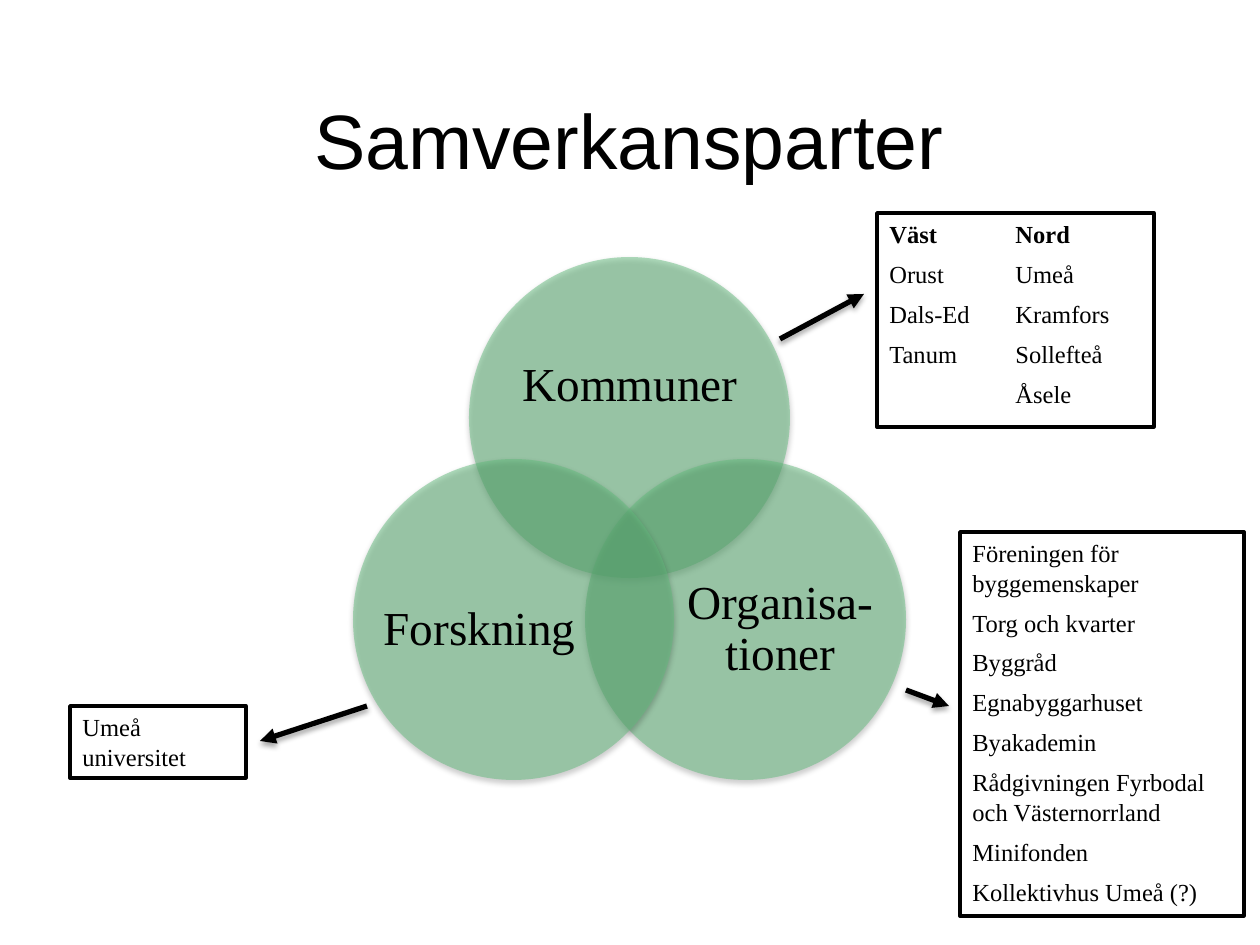
import pptx
import pptx.dml.color
import pptx.enum.shapes
import pptx.enum.text
import pptx.oxml
import pptx.oxml.ns
import pptx.util
from dataclasses import dataclass

SHAPE = pptx.enum.shapes.MSO_SHAPE
ALIGN = pptx.enum.text.PP_ALIGN
ANCHOR = pptx.enum.text.MSO_ANCHOR


@dataclass
class Theme:
    """Colours, fonts and sizes of the slide."""
    ink: str = "000000"
    paper: str = "FFFFFF"
    green: str = "62BA7C"
    sans: str = "Arial"
    serif: str = "Times New Roman"
    title: int = 44
    label: int = 27
    body: int = 14
    frame: int = 2
    arrow: int = 3
    gap: int = 6


THEME = Theme()
TOWNS = ["Väst", "Orust", "Dals-Ed", "Tanum",
         "Nord", "Umeå", "Kramfors", "Sollefteå", "Åsele"]
GROUPS = ["Föreningen för byggemenskaper", "Torg och kvarter", "Byggråd",
          "Egnabyggarhuset", "Byakademin",
          "Rådgivningen Fyrbodal och Västernorrland", "Minifonden",
          "Kollektivhus Umeå (?)"]


def px(num):
    """Turn pixels into EMU."""
    return pptx.util.Inches(num / 126)


def scale(box):
    """Turn a pixel box into EMU lengths."""
    return [px(num) for num in box]


def color(code):
    """Make a colour from its hex code."""
    return pptx.dml.color.RGBColor.from_string(code)


def make(tag, attrs=""):
    """Make an empty drawing element."""
    space = pptx.oxml.ns.nsdecls("a")
    return pptx.oxml.parse_xml(f"<a:{tag} {space} {attrs}/>")


def shade(item, alpha, dist):
    """Give a shape or line a soft shadow straight below."""
    list_ = make("effectLst")
    drop = make("outerShdw", f'blurRad="{pptx.util.Pt(3.1)}" '
                f'dist="{pptx.util.Pt(dist)}" dir="5400000" rotWithShape="0"')
    ink = make("srgbClr", f'val="{THEME.ink}"')
    ink.append(make("alpha", f'val="{alpha * 1000}"'))
    drop.append(ink)
    list_.append(drop)
    item.element.spPr.append(list_)


def style(para, size, face, bold=False):
    """Set the font of a paragraph."""
    font = para.font
    font.size = pptx.util.Pt(size)
    font.name = face
    font.bold = bold
    font.color.rgb = color(THEME.ink)


def title(slide, box, text):
    """Place the centred heading."""
    frame = slide.shapes.add_textbox(*scale(box)).text_frame
    frame.word_wrap = True
    frame.vertical_anchor = ANCHOR.MIDDLE
    para = frame.paragraphs[0]
    para.text = text
    para.alignment = ALIGN.CENTER
    style(para, THEME.title, THEME.sans)


def disc(slide, box):
    """Place one see-through circle."""
    item = slide.shapes.add_shape(SHAPE.OVAL, *scale(box))
    item.fill.solid()
    item.fill.fore_color.rgb = color(THEME.green)
    tint = item.element.spPr.find(".//" + pptx.oxml.ns.qn("a:srgbClr"))
    tint.append(make("alpha", 'val="50000"'))
    item.line.fill.background()
    shade(item, 38, 1.6)


def label(slide, box, text):
    """Place the centred name of a circle."""
    frame = slide.shapes.add_textbox(*scale(box)).text_frame
    frame.word_wrap = True
    frame.vertical_anchor = ANCHOR.MIDDLE
    frame.margin_left = frame.margin_right = 0
    frame.margin_top = frame.margin_bottom = 0
    para = frame.paragraphs[0]
    para.text = text
    para.alignment = ALIGN.CENTER
    para.line_spacing = 0.9
    style(para, THEME.label, THEME.serif)


def venn(slide, box):
    """Place three overlapping circles with their names."""
    left, top, wide, high = box
    size = 321
    far, low = wide - size, high - size
    parts = [("Kommuner", far / 2, 0, (159, 57, 236, 145)),
             ("Organisa-tioner", far, low, (331, 285, 193, 176)),
             ("Forskning", 0, low, (30, 285, 193, 176))]
    for text, x, y, (dx, dy, span, rise) in parts:
        disc(slide, (left + x, top + y, size, size))
        label(slide, (left + dx, top + dy, span, rise), text)


def panel(slide, box, lines, heads=(), cols=1):
    """Place a framed list, with bold heads that start columns."""
    item = slide.shapes.add_shape(SHAPE.RECTANGLE, *scale(box))
    item.shadow.inherit = False
    item.fill.solid()
    item.fill.fore_color.rgb = color(THEME.paper)
    item.line.color.rgb = color(THEME.ink)
    item.line.width = pptx.util.Pt(THEME.frame)
    frame = item.text_frame
    frame.word_wrap = True
    frame.vertical_anchor = ANCHOR.TOP
    if cols > 1:
        body = frame._txBody.find(pptx.oxml.ns.qn("a:bodyPr"))
        body.set("numCol", str(cols))
    for i, text in enumerate(lines):
        para = frame.add_paragraph() if i else frame.paragraphs[0]
        para.text = text
        para.alignment = ALIGN.LEFT
        ends = i + 1 < len(lines) and lines[i + 1] in heads
        room = 2 * THEME.gap + 16 if ends else THEME.gap
        para.space_after = pptx.util.Pt(room if len(lines) > 1 else 0)
        style(para, THEME.body, THEME.serif, text in heads)


def arrow(slide, start, end):
    """Draw an arrow from start to end."""
    kind = pptx.enum.shapes.MSO_CONNECTOR.STRAIGHT
    item = slide.shapes.add_connector(kind, *scale(start + end))
    item.line.color.rgb = color(THEME.ink)
    item.line.width = pptx.util.Pt(THEME.arrow)
    line = item.element.spPr.find(pptx.oxml.ns.qn("a:ln"))
    line.append(make("tailEnd", 'type="triangle"'))
    shade(item, 35, 1.8)


def main():
    """Build the slide and save it."""
    deck = pptx.Presentation()
    deck.slide_width, deck.slide_height = px(1260), px(945)
    slide = deck.slides.add_slide(deck.slide_layouts[6])
    venn(slide, (353, 257, 553, 523))
    title(slide, (171, 64, 916, 149), "Samverkansparter")
    panel(slide, (877, 213, 277, 214), TOWNS, ("Väst", "Nord"), 2)
    arrow(slide, (780, 339), (864, 294))
    panel(slide, (70, 706, 176, 72), ["Umeå universitet"])
    arrow(slide, (367, 706), (260, 741))
    panel(slide, (960, 532, 284, 384), GROUPS)
    arrow(slide, (906, 690), (949, 706))
    deck.save("out.pptx")


if __name__ == "__main__":
    main()
